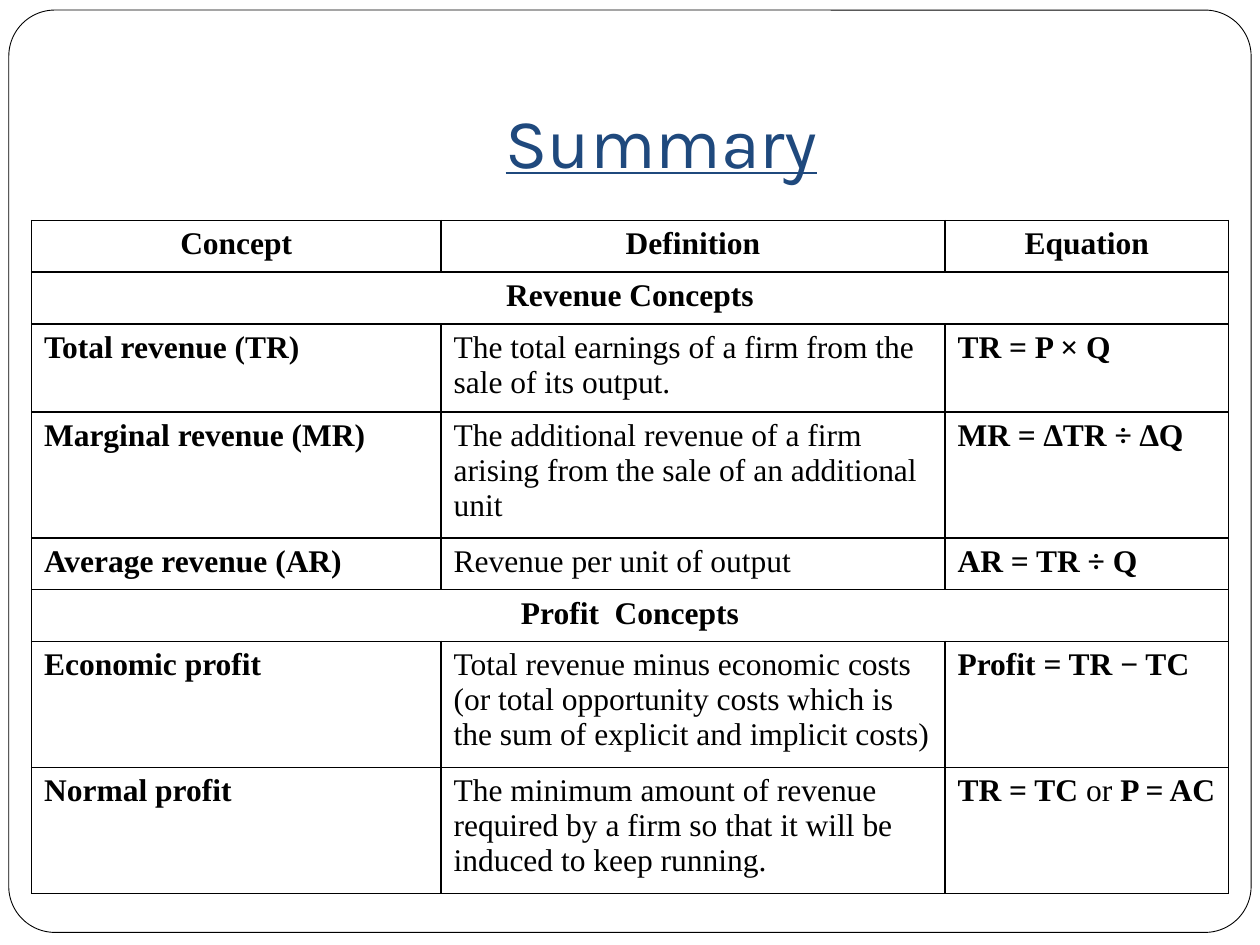
from pptx import Presentation
from pptx.dml.color import RGBColor
from pptx.enum.shapes import MSO_SHAPE
from pptx.enum.text import MSO_ANCHOR, PP_ALIGN
from pptx.oxml import parse_xml
from pptx.oxml.ns import nsdecls
from pptx.util import Inches, Pt

INK = "000000"
WIDTHS = [3.25, 4, 2.25]
HEIGHT = 0.41
ROWS = [
    ["Concept", "Definition", "Equation"],
    ["Revenue Concepts"],
    ["Total revenue (TR)",
     "The total earnings of a firm from the sale of its output.",
     "TR = P × Q"],
    ["Marginal revenue (MR)",
     "The additional revenue of a firm arising from the sale of an additional unit",
     "MR = ∆TR ÷ ∆Q"],
    ["Average revenue (AR)", "Revenue per unit of output", "AR = TR ÷ Q"],
    ["Profit  Concepts"],
    ["Economic profit",
     "Total revenue minus economic costs (or total opportunity costs "
     "which is the sum of explicit and implicit costs)",
     "Profit = TR − TC"],
    ["Normal profit",
     "The minimum amount of revenue required by a firm so that it will be "
     "induced to keep running.",
     "TR = TC or P = AC"],
]


def color(code):
    return RGBColor.from_string(code)


def style(run, face, size, code, bold=False):
    font = run.font
    font.name, font.size, font.bold = face, Pt(size), bold
    font.color.rgb = color(code)


def add_frame(slide):
    frame = slide.shapes.add_shape(
        MSO_SHAPE.ROUNDED_RECTANGLE,
        Inches(0.07), Inches(0.08), Inches(9.86), Inches(7.32))
    frame.adjustments[0] = 0.05
    frame.shadow.inherit = False
    frame.fill.solid()
    frame.fill.fore_color.rgb = color("FFFFFF")
    frame.line.color.rgb = color(INK)
    frame.line.width = Pt(0.5)


def add_title(slide, text):
    box = slide.shapes.add_textbox(
        Inches(1), Inches(0.3), Inches(8.5), Inches(1.25))
    body = box.text_frame
    body.word_wrap = True
    body.vertical_anchor = MSO_ANCHOR.BOTTOM
    body.margin_bottom = Inches(0.1)
    body.text = text
    para = body.paragraphs[0]
    para.alignment = PP_ALIGN.CENTER
    style(para.runs[0], "Karla", 40, "1F497D")
    para.runs[0].font.underline = True


def add_border(cell):
    props = cell._tc.get_or_add_tcPr()
    for spot, side in enumerate(["lnL", "lnR", "lnT", "lnB"]):
        props.insert(spot, parse_xml(
            f'<a:{side} {nsdecls("a")} w="{Pt(1)}"><a:solidFill>'
            f'<a:srgbClr val="{INK}"/></a:solidFill></a:{side}>'))


def fill_cell(cell, text, bold, center):
    para = cell.text_frame.paragraphs[0]
    para.alignment = PP_ALIGN.CENTER if center else PP_ALIGN.LEFT
    start, link, end = text.partition(" or ") if bold else (text, "", "")
    if link:
        parts = [(start + " ", True), ("or ", False), (end, True)]
    else:
        parts = [(text, bold)]
    for words, heavy in parts:
        run = para.add_run()
        run.text = words
        style(run, "Times New Roman", 18, INK, heavy)


def add_grid(slide):
    grid = slide.shapes.add_table(
        len(ROWS), len(WIDTHS), Inches(0.25), Inches(1.75),
        Inches(sum(WIDTHS)), Inches(HEIGHT * len(ROWS))).table
    grid.first_row = grid.horz_banding = False
    for col, width in zip(grid.columns, WIDTHS):
        col.width = Inches(width)
    for row in grid.rows:
        row.height = Inches(HEIGHT)
        for cell in row.cells:
            cell.fill.background()
            add_border(cell)
    for top, texts in enumerate(ROWS):
        band = len(texts) == 1
        if band:
            grid.cell(top, 0).merge(grid.cell(top, len(WIDTHS) - 1))
        center = band or top == 0
        for left, text in enumerate(texts):
            fill_cell(grid.cell(top, left), text, center or left != 1, center)


def main():
    deck = Presentation()
    deck.slide_width, deck.slide_height = Inches(10), Inches(7.5)
    slide = deck.slides.add_slide(deck.slide_layouts[6])
    add_frame(slide)
    add_title(slide, "Summary")
    add_grid(slide)
    deck.save("out.pptx")


if __name__ == "__main__":
    main()
